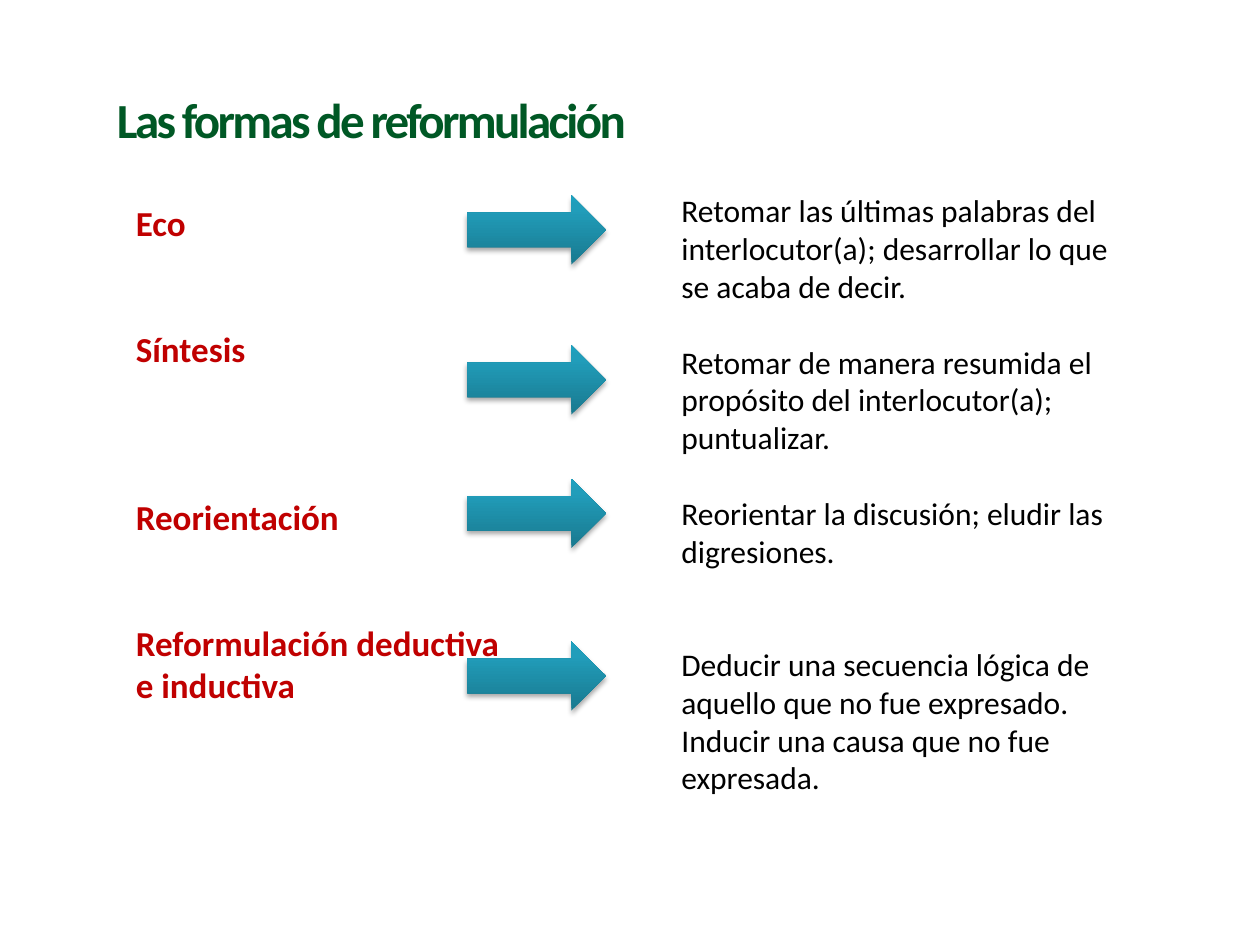
from copy import deepcopy

from lxml import etree
from pptx import Presentation
from pptx.dml.color import RGBColor
from pptx.enum.shapes import MSO_SHAPE
from pptx.oxml.ns import qn
from pptx.util import Inches, Pt

RIGHT_ARROW = MSO_SHAPE.RIGHT_ARROW
WIDTH, HEIGHT = 10, 7.5
FONT = "Calibri"
GREEN, RED, BLACK = "005825", "C00000", "000000"
TEAL_STOPS = [(0, "19798F"), (0.8, "219DBA"), (1, "1EA0BE")]
LINE_RATIO = 1.2
ARROW_LEFT, ARROW_SIZE = 3.71, (1.1, 0.55)
ARROW_TOPS = [1.55, 2.74, 3.8, 5.09]

FORMS = [
    ("Eco", 0),
    ("Síntesis", 2),
    ("Reorientación", 3),
    ("Reformulación deductiva", 2),
    ("e inductiva", 0),
]
DEFINITIONS = [
    ("Retomar las últimas palabras del interlocutor(a); desarrollar lo que se acaba de decir.", 0),
    ("Retomar de manera resumida el propósito del interlocutor(a); puntualizar.", 1),
    ("Reorientar la discusión; eludir las digresiones.", 1),
    ("Deducir una secuencia lógica de aquello que no fue expresado. "
     "Inducir una causa que no fue expresada.", 2),
]


def color(hex_value):
    """Turn a hex string into a colour."""
    return RGBColor.from_string(hex_value)


def add_text(slide, box, entries, size, hex_value, bold=False, wrap=True):
    """Add a text box of (text, lines of gap before) entries and return its frame."""
    frame = slide.shapes.add_textbox(*map(Inches, box)).text_frame
    frame.word_wrap = wrap
    for index, (text, gap_lines) in enumerate(entries):
        paragraph = frame.add_paragraph() if index else frame.paragraphs[0]
        paragraph.text = text
        if gap_lines:
            paragraph.space_before = Pt(gap_lines * size * LINE_RATIO)
        for run in paragraph.runs:
            run.font.name = FONT
            run.font.size = Pt(size)
            run.font.bold = bold
            run.font.color.rgb = color(hex_value)
    return frame


def add_title(slide, text):
    """Add the tightly spaced slide title."""
    frame = add_text(slide, (0.83, 0.43, 4.29, 0.73), [(text, 0)], 28, GREEN, True, False)
    paragraph = frame.paragraphs[0]
    paragraph.line_spacing = 1.5
    paragraph.runs[0].font._element.set("spc", "-150")


def fill_gradient(shape, stops):
    """Fill a shape with an upward gradient of (position, hex) stops."""
    shape.fill.gradient()
    shape.fill.gradient_angle = 90
    stop_list = shape._element.spPr.find(qn("a:gradFill")).find(qn("a:gsLst"))
    stop_list.insert(1, deepcopy(stop_list[0]))
    for stop, (position, hex_value) in zip(shape.fill.gradient_stops, stops):
        stop.position = position
        stop.color.rgb = color(hex_value)


def add_shadow(shape):
    """Give a shape a soft shadow below it."""
    shape.shadow.inherit = False
    effects = shape._element.spPr.find(qn("a:effectLst"))
    shadow = etree.SubElement(
        effects, qn("a:outerShdw"), blurRad=str(Pt(3.1)), dist=str(Pt(1.8)),
        dir="5400000", rotWithShape="0")
    tone = etree.SubElement(shadow, qn("a:srgbClr"), val=BLACK)
    etree.SubElement(tone, qn("a:alpha"), val="35000")


def add_arrow(slide, top):
    """Add an arrow leading from a form to its definition."""
    arrow = slide.shapes.add_shape(
        RIGHT_ARROW, *map(Inches, (ARROW_LEFT, top, *ARROW_SIZE)))
    fill_gradient(arrow, TEAL_STOPS)
    arrow.line.fill.background()
    add_shadow(arrow)


def main():
    """Build and save the slide."""
    deck = Presentation()
    deck.slide_width, deck.slide_height = Inches(WIDTH), Inches(HEIGHT)
    slide = deck.slides.add_slide(deck.slide_layouts[6])
    add_text(slide, (0.98, 1.55, 3.7, 4.44), FORMS, 20, RED, bold=True)
    add_title(slide, "Las formas de reformulación")
    add_text(slide, (5.31, 1.47, 3.7, 4.95), DEFINITIONS, 18, BLACK)
    for top in ARROW_TOPS:
        add_arrow(slide, top)
    deck.save("out.pptx")


if __name__ == "__main__":
    main()
